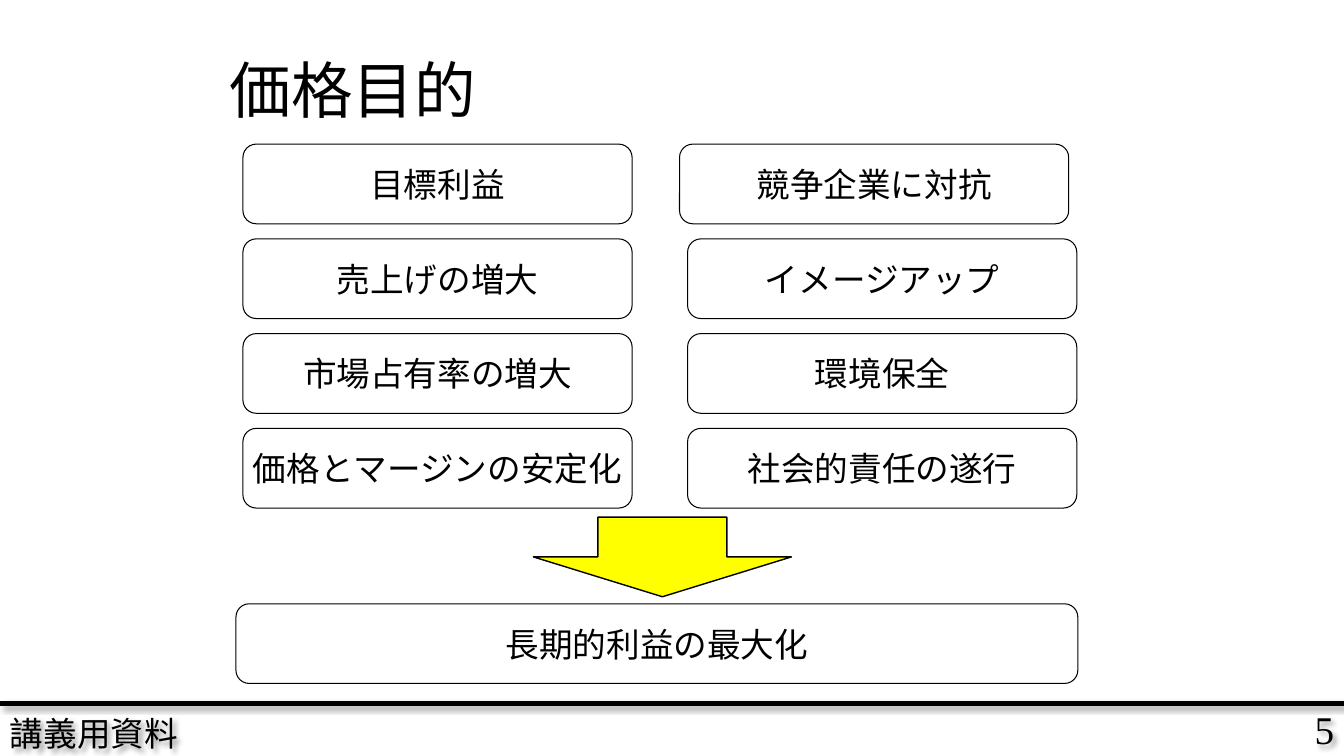
from lxml import etree
from pptx import Presentation
from pptx.dml.color import RGBColor
from pptx.enum.shapes import MSO_CONNECTOR as CONN, MSO_SHAPE as SHAPE
from pptx.enum.text import MSO_ANCHOR as ANCHOR, PP_ALIGN as ALIGN
from pptx.oxml.ns import qn
from pptx.util import Inches, Pt

# Content
TITLE = "価格目的"
GOALS = [
    ("目標利益", "競争企業に対抗"),
    ("売上げの増大", "イメージアップ"),
    ("市場占有率の増大", "環境保全"),
    ("価格とマージンの安定化", "社会的責任の遂行"),
]
RESULT = "長期的利益の最大化"
FOOTER, PAGE = "講義用資料", "5"

# Layout in inches
W, H = 13.33, 7.5
LEFT, RIGHT = 2.41, 6.82
TOP, PITCH = 1.43, 0.94
BOX_W, BOX_H = 3.86, 0.79
FIRST_RIGHT_SHIFT = -0.08
RULE_Y = 6.98
SERIF, CJK = "Times New Roman", "Noto Sans CJK JP"
BLACK, YELLOW = "000000", "FFFF00"


def color(value):
    return RGBColor.from_string(value)


def write(sp, text, size, align, font=SERIF, wrap=True):
    tf = sp.text_frame
    tf.word_wrap = wrap
    tf.vertical_anchor = ANCHOR.MIDDLE
    p = tf.paragraphs[0]
    p.alignment = align
    r = p.add_run()
    r.text = text
    r.font.size = Pt(size)
    r.font.color.rgb = color(BLACK)
    r.font.name = font
    etree.SubElement(r.font._element, qn("a:ea"), typeface=CJK)
    return p


def add_label(slide, box, *args, **kwargs):
    sp = slide.shapes.add_textbox(*map(Inches, box))
    return sp, write(sp, *args, **kwargs)


def add_outlined(slide, kind, box, width):
    sp = slide.shapes.add_shape(kind, *map(Inches, box))
    sp.shadow.inherit = False
    sp.fill.background()
    sp.line.color.rgb = color(BLACK)
    sp.line.width = Pt(width)
    return sp


def add_goal(slide, text, box):
    sp = add_outlined(slide, SHAPE.ROUNDED_RECTANGLE, box, 0.75)
    write(sp, text, 24, ALIGN.CENTER, wrap=False)


def cast_shadow(sp):
    effects = etree.SubElement(sp._element.spPr, qn("a:effectLst"))
    shadow = etree.SubElement(effects, qn("a:outerShdw"), blurRad=str(Pt(4)),
                              dist=str(Pt(3)), dir=str(45 * 60000))
    tint = etree.SubElement(shadow, qn("a:srgbClr"), val=BLACK)
    etree.SubElement(tint, qn("a:alpha"), val="40000")


def main():
    prs = Presentation()
    prs.slide_width, prs.slide_height = Inches(W), Inches(H)
    slide = prs.slides.add_slide(prs.slide_layouts[6])

    # Footer: page number, name and rule
    page, _ = add_label(slide, (W - 1.78, RULE_Y, 1.78, 0.51), PAGE, 28, ALIGN.RIGHT)
    name, _ = add_label(slide, (0, H - 0.45, 3.6, 0.45), FOOTER, 24, ALIGN.LEFT)
    rule = slide.shapes.add_connector(
        CONN.STRAIGHT, 0, Inches(RULE_Y), Inches(W), Inches(RULE_Y))
    rule.line.color.rgb = color(BLACK)
    rule.line.width = Pt(3)
    for sp in (page, name, rule):
        cast_shadow(sp)

    # Title
    _, p = add_label(slide, (2.18, 0.3, 9, 1.25), TITLE, 44, ALIGN.LEFT, font=CJK)
    p.line_spacing = 0.9

    # Two columns of goals
    for row, pair in enumerate(GOALS):
        right = RIGHT + (FIRST_RIGHT_SHIFT if row == 0 else 0)
        for text, x in zip(pair, (LEFT, right)):
            add_goal(slide, text, (x, TOP + row * PITCH, BOX_W, BOX_H))

    # Result and the arrow leading to it
    add_goal(slide, RESULT, (2.34, 5.99, 8.35, BOX_H))
    arrow = add_outlined(slide, SHAPE.DOWN_ARROW, (5.29, 5.13, 2.56, BOX_H), 1)
    arrow.fill.solid()
    arrow.fill.fore_color.rgb = color(YELLOW)

    prs.save("out.pptx")


if __name__ == "__main__":
    main()
